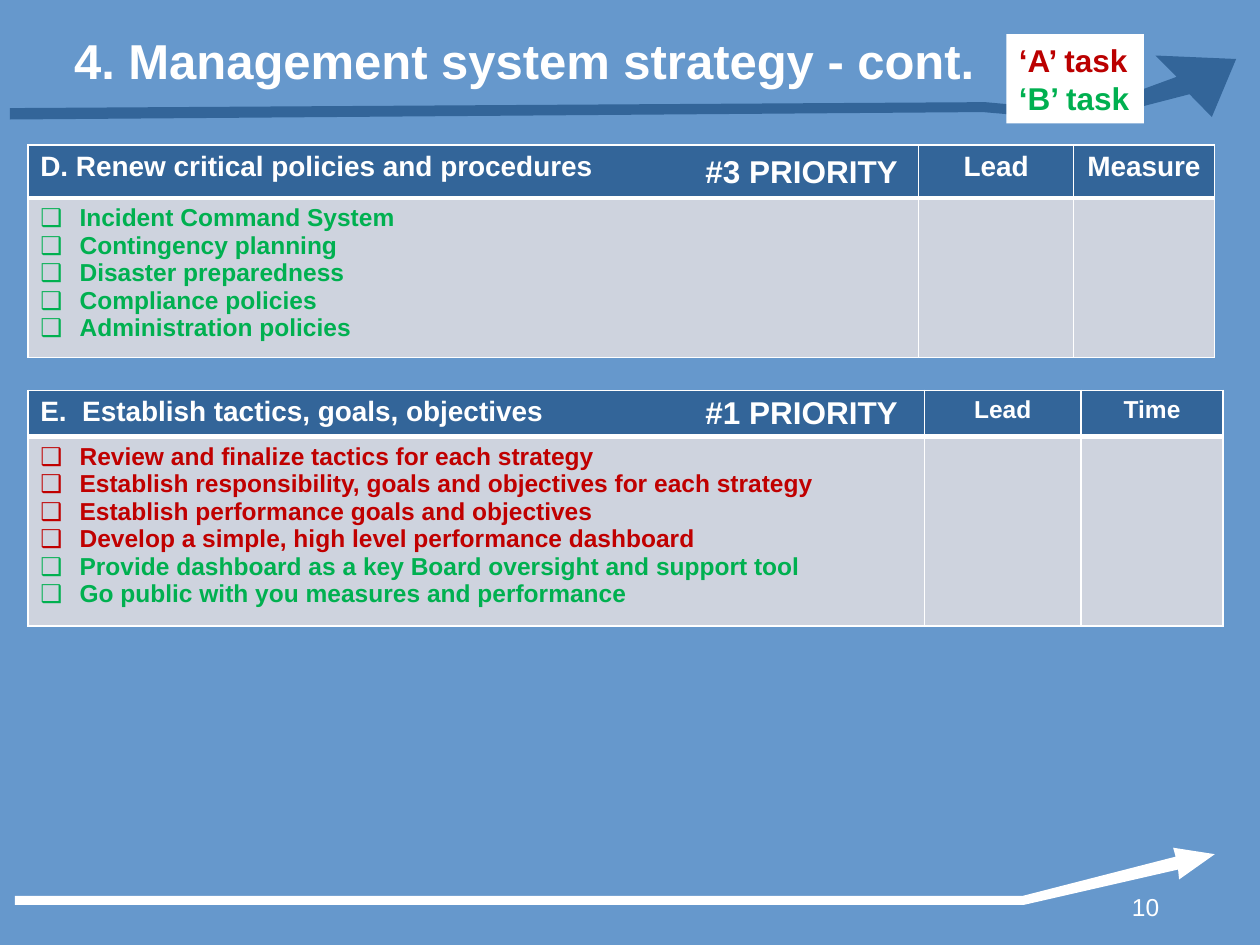
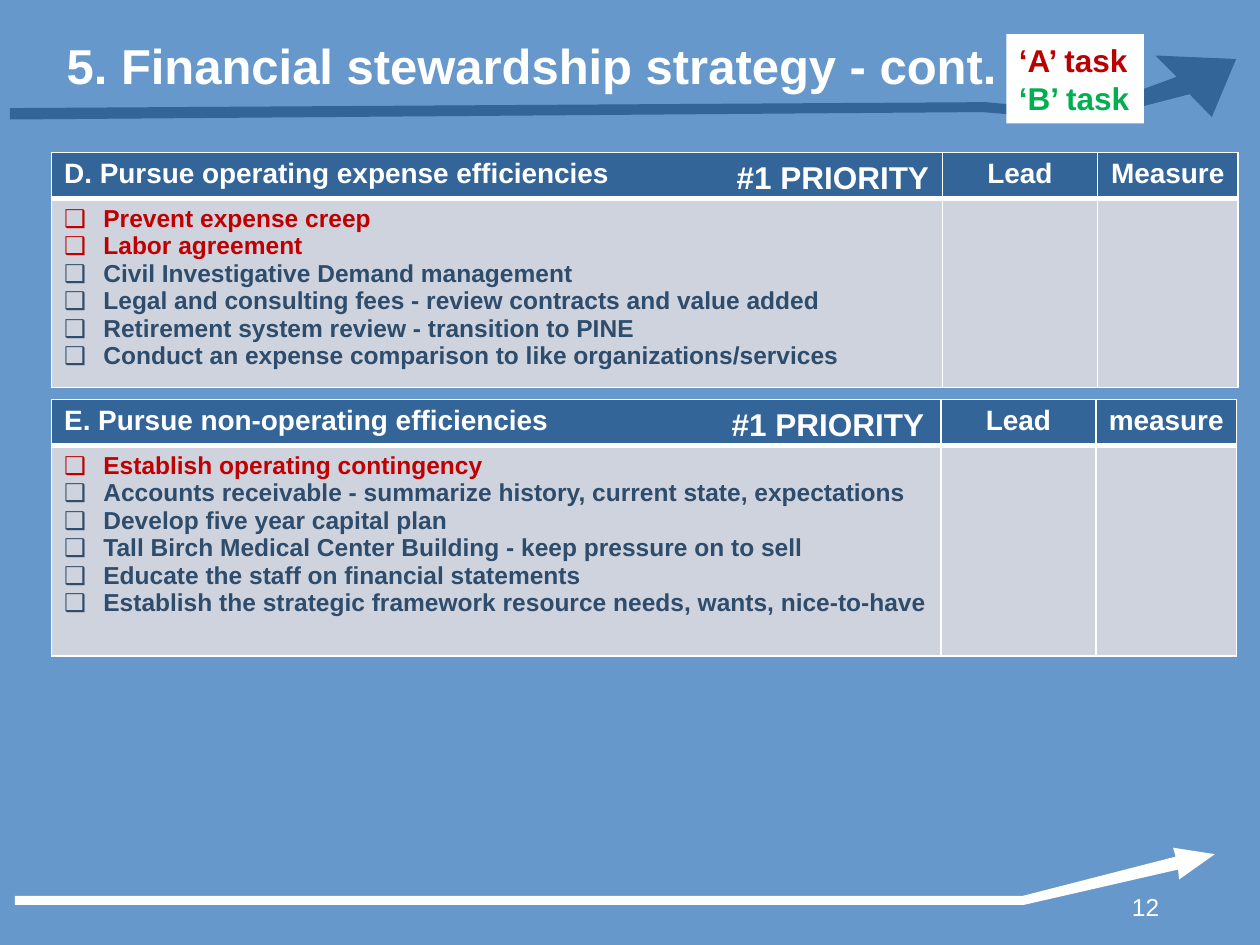
"""Build two strategy slides with task tables, priority tags and arrow bands."""
from pptx import Presentation
from pptx.dml.color import RGBColor
from pptx.enum.shapes import MSO_SHAPE
from pptx.enum.text import MSO_ANCHOR, PP_ALIGN
from pptx.oxml import parse_xml
from pptx.oxml.ns import nsdecls
from pptx.util import Cm, Pt

LEFT, MID, RIGHT = PP_ALIGN.LEFT, PP_ALIGN.CENTER, PP_ALIGN.RIGHT
CENTRE = MSO_ANCHOR.MIDDLE
RECT = MSO_SHAPE.RECTANGLE

FONT = "Arial"
SKY, NAVY, GREY, WHITE = "6698CC", "336599", "CED3DE", "FFFFFF"
RED, GREEN, SLATE, DARK = "C00000", "00B050", "2E4C6B", "BB0000"

BANDS = [
    (WHITE, [(30, 1806), (2062, 1806), (2370, 1727), (2365, 1709), (2449, 1722),
             (2377, 1773), (2375, 1753), (2065, 1824), (30, 1824)]),
    (NAVY, [(20, 241), (1981, 226), (2189, 244), (2398, 190), (2443, 236), (2492, 119),
            (2329, 112), (2372, 155), (2184, 224), (1986, 206), (20, 218)]),
]

PAGES = [
    {
        "title": "4. Management system strategy - cont.",
        "box": (1.24, 0.41, 23.04, 1.6),
        "page": "10",
        "tables": [
            {
                "at": (0.56, 2.92), "cols": (17.96, 3.12, 2.84), "rows": (1.07, 3.05),
                "heads": ("D. Renew critical policies and procedures", "Lead", "Measure"),
                "size": 16, "tag": "#3 PRIORITY", "spot": (13.97, 2.95),
                "tasks": [
                    ("Incident Command System", GREEN),
                    ("Contingency planning", GREEN),
                    ("Disaster preparedness", GREEN),
                    ("Compliance policies", GREEN),
                    ("Administration policies", GREEN),
                ],
            },
            {
                "at": (0.56, 7.87), "cols": (18.08, 3.15, 2.87), "rows": (0.85, 3.58),
                "heads": ("E.  Establish tactics, goals, objectives", "Lead", "Time"),
                "size": 14, "tag": "#1 PRIORITY", "spot": (13.97, 7.8),
                "tasks": [
                    ("Review and finalize tactics for each strategy", RED),
                    ("Establish responsibility, goals and objectives for each strategy", RED),
                    ("Establish performance goals and objectives", RED),
                    ("Develop a simple, high level performance dashboard", RED),
                    ("Provide dashboard as a key Board oversight and support tool", GREEN),
                    ("Go public with you measures and performance", GREEN),
                ],
            },
        ],
    },
    {
        "title": "5. Financial stewardship strategy - cont.",
        "box": (1.09, 0.51, 21.97, 1.6),
        "page": "12",
        "tables": [
            {
                "at": (1.04, 3.07), "cols": (17.96, 3.12, 2.84), "rows": (0.85, 3.63),
                "heads": ("D. Pursue operating expense efficiencies", "Lead", "Measure"),
                "size": 16, "tag": "#1 PRIORITY", "spot": (14.6, 3.07),
                "tasks": [
                    ("Prevent expense creep", RED),
                    ("Labor agreement", RED),
                    ("Civil Investigative Demand management", SLATE),
                    ("Legal and consulting fees - review contracts and value added", SLATE),
                    ("Retirement system review - transition to PINE", SLATE),
                    ("Conduct an expense comparison to like organizations/services", SLATE),
                ],
            },
            {
                "at": (1.04, 8.05), "cols": (17.93, 3.12, 2.84), "rows": (0.85, 4.24),
                "heads": ("E. Pursue non-operating efficiencies", "Lead", "measure"),
                "size": 16, "tag": "#1 PRIORITY", "spot": (14.5, 8.05),
                "tasks": [
                    ("Establish operating contingency", RED),
                    ("Accounts receivable - summarize history, current state, expectations", SLATE),
                    ("Develop five year capital plan", SLATE),
                    ("Tall Birch Medical Center Building - keep pressure on to sell", SLATE),
                    ("Educate the staff on financial statements", SLATE),
                    ("Establish the strategic framework resource needs, wants, nice-to-have", SLATE),
                ],
            },
        ],
    },
]


def paint(fill, color):
    """Make a fill solid in a hex colour."""
    fill.solid()
    fill.fore_color.rgb = RGBColor.from_string(color)


def write(frame, lines, size, align=LEFT, bold=True, bullet=None):
    """Fill a text frame with one paragraph for each (text, colour) line."""
    for i, (text, color) in enumerate(lines):
        para = frame.add_paragraph() if i else frame.paragraphs[0]
        para.alignment = align
        if bullet:
            props = para._p.get_or_add_pPr()
            props.set("marL", str(Cm(0.79)))
            props.set("indent", str(-Cm(0.79)))
            props.append(parse_xml(f'<a:buFont {nsdecls("a")} typeface="{FONT}"/>'))
            props.append(parse_xml(f'<a:buChar {nsdecls("a")} char="{bullet}"/>'))
        run = para.add_run()
        run.text = text
        run.font.name, run.font.size, run.font.bold = FONT, Pt(size), bold
        paint(run.font.fill, color)


deck = Presentation()
deck.slide_width, deck.slide_height = Cm(25.4), Cm(19.05)
layout = deck.slide_layouts[5]
paint(layout.background.fill, SKY)
slides = [deck.slides.add_slide(layout) for _ in PAGES]

for spot, (color, dots) in enumerate(BANDS, 2):
    pen = slides[0].shapes.build_freeform(*dots[0], scale=Cm(0.01))
    pen.add_line_segments(dots[1:], close=True)
    band = pen.convert_to_shape()
    band.shadow.inherit = False
    paint(band.fill, color)
    band.line.fill.background()
    layout.shapes.element.insert(spot, band.element)

for slide, page in zip(slides, PAGES):
    shapes = slide.shapes
    title = shapes.title
    title.left, title.top, title.width, title.height = map(Cm, page["box"])
    title.text_frame.vertical_anchor = CENTRE
    write(title.text_frame, [(page["title"], WHITE)], 28)

    number = shapes.add_textbox(Cm(21.79), Cm(17.86), Cm(1.83), Cm(0.79))
    number.text_frame.word_wrap = True
    write(number.text_frame, [(page["page"], WHITE)], 14, RIGHT, bold=False)

    for item in page["tables"]:
        cols, rows = item["cols"], item["rows"]
        frame = shapes.add_table(2, 3, *map(Cm, item["at"]), Cm(sum(cols)), Cm(sum(rows)))
        table = frame.table
        for col, width in zip(table.columns, cols):
            col.width = Cm(width)
        for row, height in zip(table.rows, rows):
            row.height = Cm(height)
        for r in range(2):
            for c in range(3):
                cell = table.cell(r, c)
                paint(cell.fill, GREY if r else NAVY)
                edges = {"L": 1, "R": 1, "T": 3 if r else 1, "B": 1 if r else 3}
                for i, (side, width) in enumerate(edges.items()):
                    cell._tc.get_or_add_tcPr().insert(i, parse_xml(
                        f'<a:ln{side} {nsdecls("a")} w="{Pt(width)}"><a:solidFill>'
                        f'<a:srgbClr val="{WHITE}"/></a:solidFill></a:ln{side}>'))
        for c, head in enumerate(item["heads"]):
            write(table.cell(0, c).text_frame, [(head, WHITE)],
                  item["size"] if c else 16, MID if c else LEFT)
        write(table.cell(1, 0).text_frame, item["tasks"], 14, bullet="❑")

    key = shapes.add_shape(RECT, Cm(20.29), Cm(0.69), Cm(2.77), Cm(1.8))
    key.shadow.inherit = False
    paint(key.fill, WHITE)
    key.line.fill.background()
    key.text_frame.word_wrap = False
    write(key.text_frame, [("‘A’ task", DARK), ("‘B’ task", GREEN)], 18)

    for item in page["tables"]:
        tag = shapes.add_textbox(*map(Cm, item["spot"]), Cm(4.42), Cm(1.02))
        tag.text_frame.word_wrap = False
        write(tag.text_frame, [(item["tag"], WHITE)], 18)

deck.save("out.pptx")
